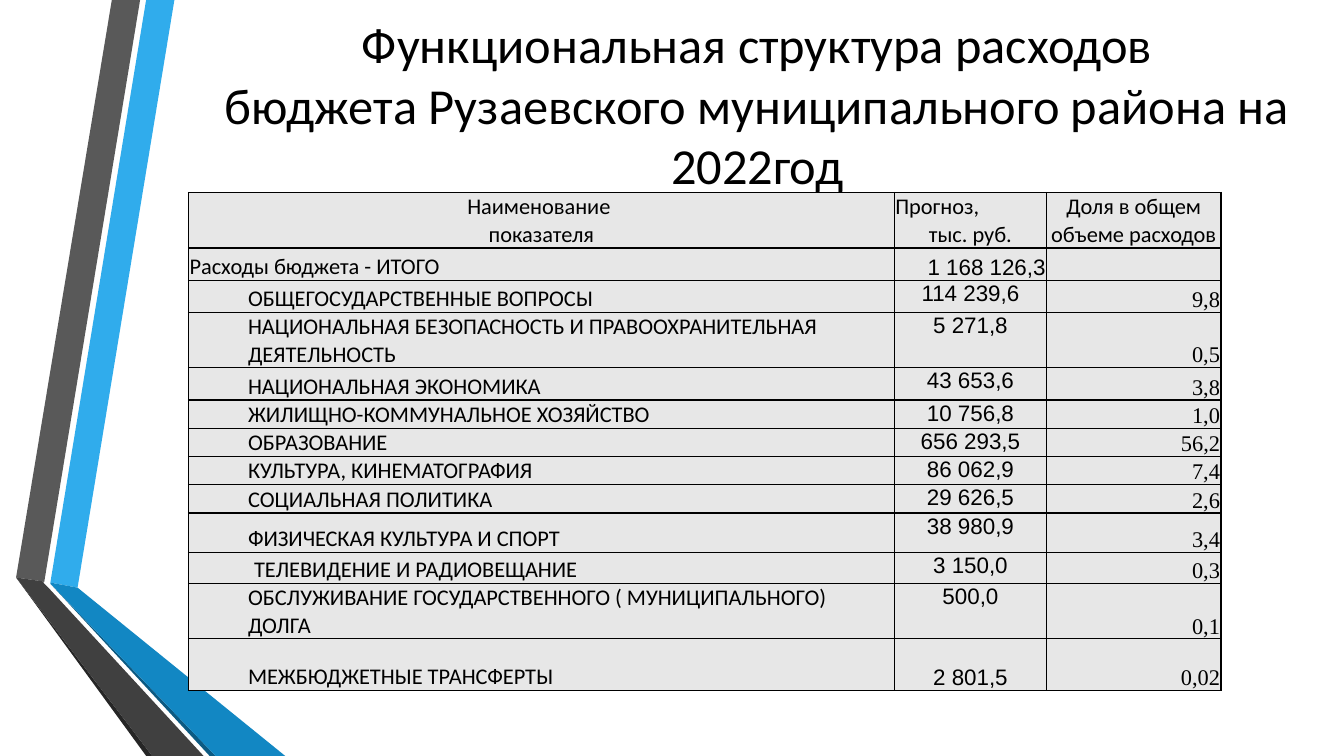
from lxml.etree import SubElement
from pptx import Presentation
from pptx.dml.color import RGBColor
from pptx.enum.text import MSO_ANCHOR, PP_ALIGN
from pptx.oxml.ns import qn
from pptx.util import Inches, Pt

LEFT, CENTER, RIGHT = PP_ALIGN.LEFT, PP_ALIGN.CENTER, PP_ALIGN.RIGHT
TOP, MIDDLE, BOTTOM = MSO_ANCHOR.TOP, MSO_ANCHOR.MIDDLE, MSO_ANCHOR.BOTTOM

# Ribbon at the left edge, from back to front
RIBBON = [
    ("30ACEC", [(0.5, 5.78), (0.77, 5.83), (1.73, 0), (1.45, 0)]),
    ("595959", [(1.39, 0), (1.11, 0), (0.16, 5.73), (0.44, 5.77)]),
    ("262626", [(0.16, 5.73), (1.45, 7.5), (1.51, 7.5)]),
    ("0C5A82", [(0.5, 5.79), (2.08, 7.5), (2.14, 7.5)]),
    ("1287C3", [(0.5, 5.79), (2.14, 7.5), (2.83, 7.5), (0.77, 5.83), (0.5, 5.78)]),
    ("404040", [(2.02, 7.5), (0.48, 5.83), (0.43, 5.78), (0.44, 5.77), (0.16, 5.73), (1.51, 7.5)]),
]
COLUMN_WIDTHS = [7, 1.51, 1.73]
HEADER_HEIGHT = 0.55
TOTAL_HEIGHT = 0.32
# Name, forecast, share, row height
EXPENSES = [
    ("ОБЩЕГОСУДАРСТВЕННЫЕ ВОПРОСЫ", "114 239,6", "9,8", 0.32),
    ("НАЦИОНАЛЬНАЯ БЕЗОПАСНОСТЬ И ПРАВООХРАНИТЕЛЬНАЯ ДЕЯТЕЛЬНОСТЬ", "5 271,8", "0,5", 0.55),
    ("НАЦИОНАЛЬНАЯ ЭКОНОМИКА", "43 653,6", "3,8", 0.32),
    ("ЖИЛИЩНО-КОММУНАЛЬНОЕ ХОЗЯЙСТВО", "10 756,8", "1,0", 0.28),
    ("ОБРАЗОВАНИЕ", "656 293,5", "56,2", 0.28),
    ("КУЛЬТУРА, КИНЕМАТОГРАФИЯ", "86 062,9", "7,4", 0.28),
    ("СОЦИАЛЬНАЯ ПОЛИТИКА", "29 626,5", "2,6", 0.28),
    ("ФИЗИЧЕСКАЯ КУЛЬТУРА И СПОРТ", "38 980,9", "3,4", 0.39),
    ("ТЕЛЕВИДЕНИЕ И РАДИОВЕЩАНИЕ", "3 150,0", "0,3", 0.31),
    ("ОБСЛУЖИВАНИЕ ГОСУДАРСТВЕННОГО ( МУНИЦИПАЛЬНОГО) ДОЛГА", "500,0", "0,1", 0.55),
    ("МЕЖБЮДЖЕТНЫЕ ТРАНСФЕРТЫ", "2 801,5", "0,02", 0.51),
]


def color(value):
    return RGBColor.from_string(value)


def apply(target, values):
    for name, value in values.items():
        setattr(target, name, value)


class SlideBuilder:
    ink, cell_fill = "000000", "E7E7E7"

    def __init__(self, page):
        self.page = page

    def ribbon_part(self, fill, points):
        corners = [(Inches(x), Inches(y)) for x, y in points]
        builder = self.page.shapes.build_freeform(*corners[0], scale=1.0)
        builder.add_line_segments(corners[1:], close=True)
        part = builder.convert_to_shape()
        part.shadow.inherit = False
        part.fill.solid()
        part.fill.fore_color.rgb = color(fill)
        part.line.fill.background()

    def fill_text(self, frame, paragraphs, size, font):
        """Each paragraph is a pair of text and alignment."""
        for index, (text, alignment) in enumerate(paragraphs):
            para = frame.add_paragraph() if index else frame.paragraphs[0]
            para.text = text
            para.alignment = alignment
            for span in para.runs:
                apply(span.font, {"size": Pt(size), "name": font})
                span.font.color.rgb = color(self.ink)

    def title(self, text, left, top, width, height):
        box = self.page.shapes.add_textbox(*map(Inches, (left, top, width, height)))
        apply(box.text_frame, {"word_wrap": True, "vertical_anchor": MIDDLE})
        self.fill_text(box.text_frame, [(text, CENTER)], 36, "Calibri")

    def table(self, left, top, widths, heights):
        frame = self.page.shapes.add_table(
            len(heights), len(widths),
            *map(Inches, (left, top, sum(widths), sum(heights))))
        for column, width in zip(frame.table.columns, widths):
            column.width = Inches(width)
        for row, height in zip(frame.table.rows, heights):
            row.height = Inches(height)
        return frame.table

    def cell(self, cell, paragraphs, anchor=BOTTOM, font="Calibri", side=0.01, indent=0):
        apply(cell, {"margin_left": Inches(side), "margin_right": Inches(0.01),
                     "margin_top": Inches(0.01), "margin_bottom": 0,
                     "vertical_anchor": anchor})
        self.fill_text(cell.text_frame, paragraphs, 16, font)
        if indent:
            properties = cell.text_frame.paragraphs[0]._p.get_or_add_pPr()
            properties.set("marL", str(Inches(indent)))
        # Borders come before the fill in the cell properties
        for edge in ("a:lnL", "a:lnR", "a:lnT", "a:lnB"):
            line = SubElement(cell._tc.get_or_add_tcPr(), qn(edge), w=str(Pt(1)))
            SubElement(SubElement(line, qn("a:solidFill")), qn("a:srgbClr"), val=self.ink)
        cell.fill.solid()
        cell.fill.fore_color.rgb = color(self.cell_fill)


def main():
    deck = Presentation()
    apply(deck, {"slide_width": Inches(13.33), "slide_height": Inches(7.5)})
    builder = SlideBuilder(deck.slides.add_slide(deck.slide_layouts[6]))

    for fill, points in RIBBON:
        builder.ribbon_part(fill, points)

    builder.title("Функциональная структура расходов\vбюджета Рузаевского "
                  "муниципального района на 2022год", 1.8, 0.17, 11.42, 1.73)

    heights = [HEADER_HEIGHT, TOTAL_HEIGHT] + [expense[3] for expense in EXPENSES]
    table = builder.table(1.87, 1.91, COLUMN_WIDTHS, heights)

    # Header row
    headers = [
        [("Наименование \vпоказателя", CENTER)],
        [("Прогноз,", LEFT), ("тыс. руб.", CENTER)],
        [("Доля в общем объеме расходов", CENTER)],
    ]
    for column, paragraphs in enumerate(headers):
        builder.cell(table.cell(0, column), paragraphs, MIDDLE)

    # Total row
    builder.cell(table.cell(1, 0), [("Расходы бюджета - ИТОГО", LEFT)])
    builder.cell(table.cell(1, 1), [("1 168 126,3", RIGHT)], font="Arial")
    builder.cell(table.cell(1, 2), [])

    # Expense rows
    for row, (name, forecast, share, _) in enumerate(EXPENSES, start=2):
        last = row == len(heights) - 1
        indent = 0.56 if name.startswith("ТЕЛЕВИДЕНИЕ") else 0.5
        builder.cell(table.cell(row, 0), [(name, LEFT)], side=0.09, indent=indent)
        builder.cell(table.cell(row, 1), [(forecast, CENTER)],
                     BOTTOM if last else TOP, "Arial")
        builder.cell(table.cell(row, 2), [(share, RIGHT)], font="Times New Roman")

    deck.save("out.pptx")


if __name__ == "__main__":
    main()
